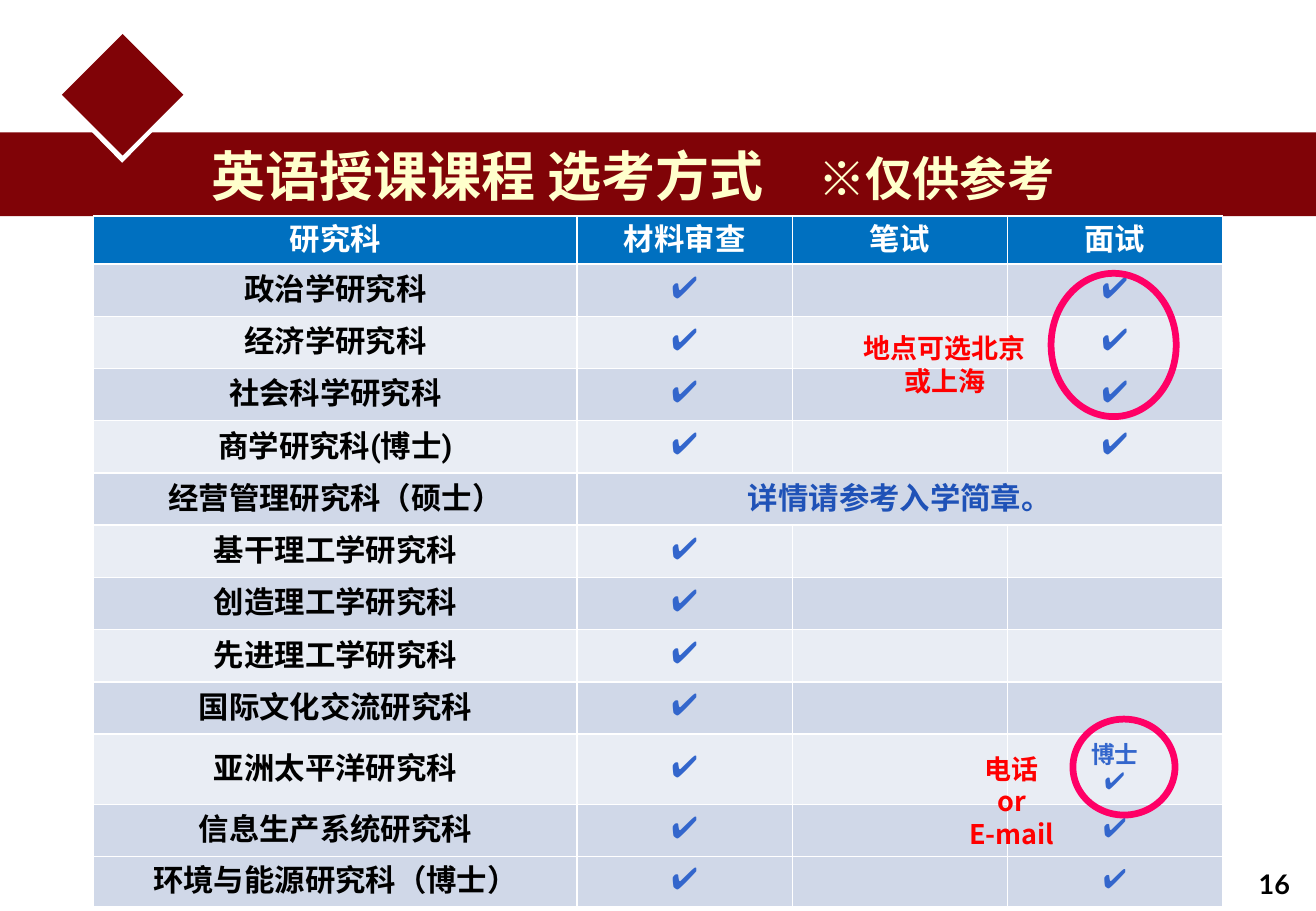
from lxml import etree
from pptx import Presentation
from pptx.dml.color import RGBColor
from pptx.enum.shapes import MSO_SHAPE
from pptx.enum.text import MSO_ANCHOR, PP_ALIGN
from pptx.oxml.ns import qn
from pptx.util import Inches, Pt

RECTANGLE, TRIANGLE = MSO_SHAPE.RECTANGLE, MSO_SHAPE.ISOSCELES_TRIANGLE
DIAMOND, OVAL = MSO_SHAPE.DIAMOND, MSO_SHAPE.OVAL
LEFT, CENTER, MIDDLE = PP_ALIGN.LEFT, PP_ALIGN.CENTER, MSO_ANCHOR.MIDDLE

WHITE = RGBColor(0xFF, 0xFF, 0xFF)
BLACK = RGBColor(0, 0, 0)
MAROON = RGBColor(0x80, 0x03, 0x07)
CREAM = RGBColor(0xFF, 0xFF, 0xCC)
HEADER_BLUE = RGBColor(0x00, 0x70, 0xC0)
BAND_DARK = RGBColor(0xD0, 0xD8, 0xE8)
BAND_LIGHT = RGBColor(0xE9, 0xED, 0xF4)
CHECK_BLUE = RGBColor(0x33, 0x66, 0xCC)
DETAIL_BLUE = RGBColor(0x1F, 0x52, 0xB7)
PINK = RGBColor(0xFF, 0x00, 0x66)
RED = RGBColor(0xFF, 0, 0)

SANS, ROBOTO, MONO = "Noto Sans CJK SC", "Roboto", "Courier New"
CHECK = "✔"


def style(paragraph, size, color, name, alignment=CENTER):
    """Make the paragraph bold, with one typeface for Latin and East Asian text."""
    paragraph.alignment = alignment
    font = paragraph.font
    font.size, font.bold, font.name = Pt(size), True, name
    font.color.rgb = color
    for run in paragraph.runs:
        run.font.name = name
        east_asian = etree.SubElement(run.font._element, qn("a:ea"))
        east_asian.set("typeface", name)


def fill_cell(cell, text, color, name, size=18):
    cell.text = text
    cell.vertical_anchor = MIDDLE
    cell.margin_left = cell.margin_right = Inches(0.11)
    for paragraph in cell.text_frame.paragraphs:
        style(paragraph, size, color, name)


presentation = Presentation()
presentation.slide_width, presentation.slide_height = Inches(10.83), Inches(7.5)
slide = presentation.slides.add_slide(presentation.slide_layouts[6])

# Banner with diamond
for kind, left, top, width, height, color in [
    (RECTANGLE, 0, 1.09, 10.83, 0.69, MAROON),
    (TRIANGLE, 0.75, 1.08, 0.51, 0.26, WHITE),
    (DIAMOND, 0.51, 0.28, 1, 1, MAROON),
]:
    shape = slide.shapes.add_shape(
        kind, Inches(left), Inches(top), Inches(width), Inches(height))
    shape.shadow.inherit = False
    shape.fill.solid()
    shape.fill.fore_color.rgb = color
    shape.line.fill.background()
    if kind == TRIANGLE:
        shape.rotation = 180

# Table: name, document review, interview
departments = [
    ("政治学研究科", CHECK, CHECK),
    ("经济学研究科", CHECK, CHECK),
    ("社会科学研究科", CHECK, CHECK),
    ("商学研究科(博士)", CHECK, CHECK),
    ("经营管理研究科（硕士）", "", ""),
    ("基干理工学研究科", CHECK, ""),
    ("创造理工学研究科", CHECK, ""),
    ("先进理工学研究科", CHECK, ""),
    ("国际文化交流研究科", CHECK, ""),
    ("亚洲太平洋研究科", CHECK, "博士\n" + CHECK),
    ("信息生产系统研究科", CHECK, CHECK),
    ("环境与能源研究科（博士）", CHECK, CHECK),
]
DETAIL_ROW, PHONE_ROW, LAST_ROW = 5, 10, 12
table = slide.shapes.add_table(
    len(departments) + 1, 4, Inches(0.77), Inches(1.78), Inches(9.29), Inches(5.57)).table
for index, column in enumerate(table.columns):
    column.width = Inches(1.77 if index else 3.98)
for row in table.rows:
    row.height = Inches(0.43)
table.rows[0].height = Inches(0.28)
table.rows[PHONE_ROW].height = Inches(0.58)
table.rows[LAST_ROW].height = Inches(0.41)

for row_index, row in enumerate(table.rows):
    band = BAND_DARK if row_index % 2 or row_index == LAST_ROW else BAND_LIGHT
    for cell in row.cells:
        cell.fill.solid()
        cell.fill.fore_color.rgb = band if row_index else HEADER_BLUE

for index, heading in enumerate(["研究科", "材料审查", "笔试", "面试"]):
    fill_cell(table.cell(0, index), heading, WHITE, ROBOTO)

for row_index, (name, review, interview) in enumerate(departments, start=1):
    name_font = "Calibri" if row_index == DETAIL_ROW else ROBOTO
    fill_cell(table.cell(row_index, 0), name, BLACK, name_font)
    if review:
        fill_cell(table.cell(row_index, 1), review, CHECK_BLUE, MONO)
    if interview:
        size = 14 if row_index == PHONE_ROW else 16 if row_index > PHONE_ROW else 18
        fill_cell(table.cell(row_index, 3), interview, CHECK_BLUE, MONO, size)

style(table.cell(PHONE_ROW, 3).text_frame.paragraphs[0], 14, CHECK_BLUE, ROBOTO)
detail = table.cell(DETAIL_ROW, 1)
detail.merge(table.cell(DETAIL_ROW, 3))
fill_cell(detail, "详情请参考入学简章。", DETAIL_BLUE, "Calibri")

# Rings around interview marks
for left, top, width, height in [(8.65, 2.25, 1.03, 1.18), (8.83, 5.92, 0.84, 0.79)]:
    ring = slide.shapes.add_shape(
        OVAL, Inches(left), Inches(top), Inches(width), Inches(height))
    ring.shadow.inherit = False
    ring.fill.background()
    ring.line.color.rgb = PINK
    ring.line.width = Pt(4)

# Title, notes and page number
for text, left, top, width, height, size, color, name, alignment, inset in [
    ("英语授课课程 选考方式　", 1.64, 1.08, 8.5, 0.64, 32, CREAM, SANS, LEFT, 0.09),
    ("地点可选北京\n或上海", 6.71, 2.65, 2.13, 0.64, 16, RED, SANS, CENTER, 0.08),
    ("电话\vor\vE-mail", 7.7, 6.11, 1.25, 0.91, 16, RED, SANS, CENTER, 0.08),
    ("16", 10.26, 7.09, 0.58, 0.37, 16, BLACK, "Lato", LEFT, 0.05),
]:
    frame = slide.shapes.add_textbox(
        Inches(left), Inches(top), Inches(width), Inches(height)).text_frame
    frame.word_wrap = name == SANS
    frame.margin_top = Inches(inset)
    frame.text = text
    if size == 32:
        remark = frame.paragraphs[0].add_run()
        remark.text = "※仅供参考"
        remark.font.size = Pt(28)
    for paragraph in frame.paragraphs:
        paragraph.line_spacing = Pt(round(size * 1.21, 1))
        style(paragraph, size, color, name, alignment)

presentation.save("out.pptx")
